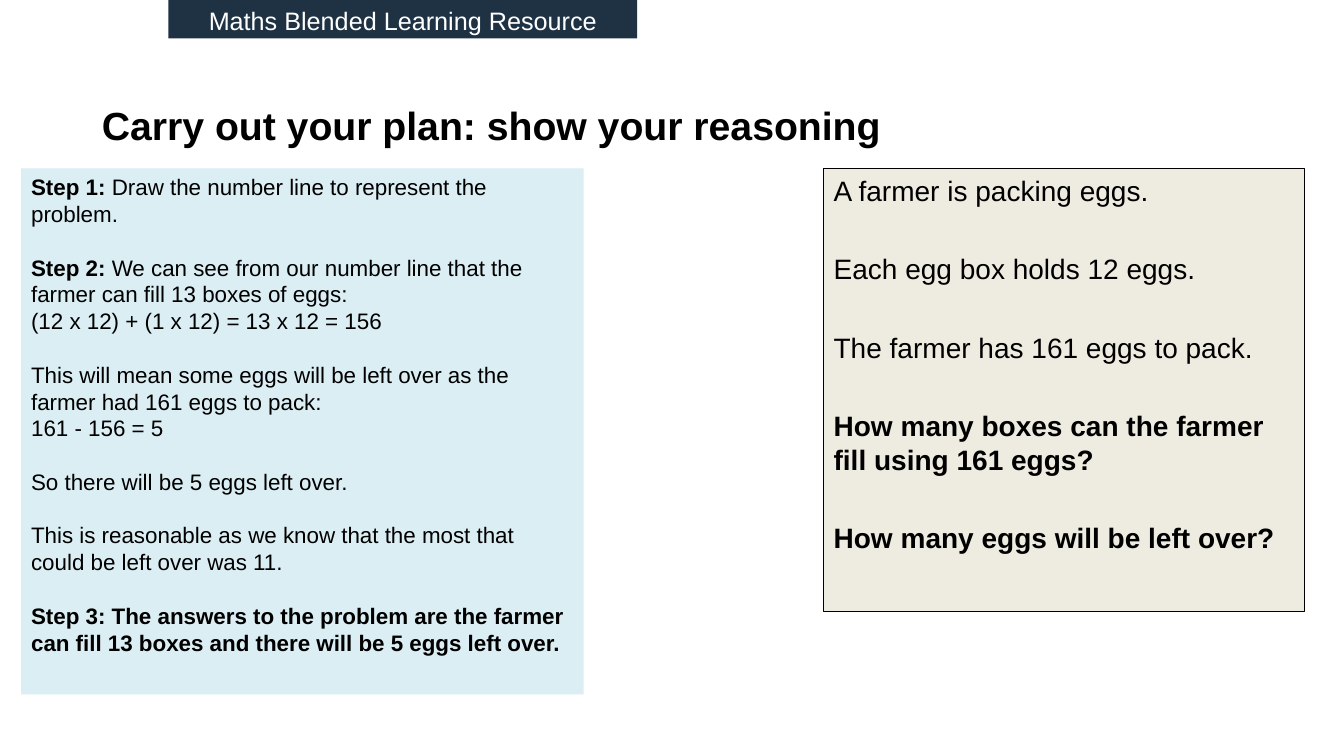
import pptx
import pptx.dml.color
import pptx.enum.shapes
import pptx.enum.text
import pptx.util

EMU_PER_PX = 9144  # 100 px to the inch
COLOURS = {
    "ink": "000000",
    "white": "FFFFFF",
    "navy": "1F3244",
    "pale blue": "DBEEF4",
    "cream": "EEECE1",
}
ALIGN = pptx.enum.text.PP_ALIGN

# Each paragraph: space before in points, bold part, plain part
SOLUTION_STEPS = [
    (0, "Step 1: ", "Draw the number line to represent the problem."),
    (19, "Step 2: ", "We can see from our number line that the farmer can fill 13 boxes of eggs:"),
    (0, "", "(12 x 12) + (1 x 12) = 13 x 12 = 156"),
    (19, "", "This will mean some eggs will be left over as the farmer had 161 eggs to pack:"),
    (0, "", "161 - 156 = 5"),
    (19, "", "So there will be 5 eggs left over."),
    (19, "", "This is reasonable as we know that the most that could be left over was 11."),
    (19, "Step 3: The answers to the problem are the farmer can fill 13 boxes "
         "and there will be 5 eggs left over.", ""),
]
EGG_PROBLEM = [
    (0, "", "A farmer is packing eggs."),
    (32, "", "Each egg box holds 12 eggs."),
    (32, "", "The farmer has 161 eggs to pack."),
    (32, "How many boxes can the farmer fill using 161 eggs?", ""),
    (32, "How many eggs will be left over?", ""),
]


def px(length):
    return pptx.util.Emu(length * EMU_PER_PX)


def rgb(name):
    return pptx.dml.color.RGBColor.from_string(COLOURS[name])


class LessonPage:
    """Holds the font and the current slide, and adds styled elements to it."""

    def __init__(self, deck, font="Arial"):
        self.font = font
        self.page = deck.slides.add_slide(deck.slide_layouts.get_by_name("Title Only"))

    def style(self, span, size, colour="ink", bold=False):
        span.font.name = self.font
        span.font.size = pptx.util.Pt(size)
        span.font.bold = bold
        span.font.color.rgb = rgb(colour)

    def title(self, text, left, top, width, height, size):
        box = self.page.shapes.title
        box.left, box.top, box.width, box.height = map(px, (left, top, width, height))
        frame = box.text_frame
        frame.text = text
        frame.vertical_anchor = pptx.enum.text.MSO_ANCHOR.MIDDLE
        frame.auto_size = pptx.enum.text.MSO_AUTO_SIZE.NONE
        para = frame.paragraphs[0]
        para.alignment = ALIGN.LEFT
        self.style(para.runs[0], size, bold=True)

    def panel(self, paragraphs, left, top, width, height, fill, size,
              colour="ink", outline=None, align=ALIGN.LEFT):
        box = self.page.shapes.add_shape(
            pptx.enum.shapes.MSO_SHAPE.RECTANGLE, *map(px, (left, top, width, height)))
        box.shadow.inherit = False
        box.fill.solid()
        box.fill.fore_color.rgb = rgb(fill)
        if outline:
            box.line.color.rgb = rgb(outline)
            box.line.width = pptx.util.Pt(0.75)
        else:
            box.line.fill.background()
        frame = box.text_frame
        frame.word_wrap = True
        frame.vertical_anchor = pptx.enum.text.MSO_ANCHOR.TOP
        for index, (gap, bold_part, plain_part) in enumerate(paragraphs):
            para = frame.add_paragraph() if index else frame.paragraphs[0]
            para.alignment = align
            para.space_before = pptx.util.Pt(gap)
            for text, bold in ((bold_part, True), (plain_part, False)):
                if text:
                    span = para.add_run()
                    span.text = text
                    self.style(span, size, colour, bold)


def main():
    deck = pptx.Presentation()
    deck.slide_width, deck.slide_height = px(1333), px(750)
    lesson = LessonPage(deck)
    lesson.title("Carry out your plan: show your reasoning", 91, 92, 900, 64, size=28)
    lesson.panel(SOLUTION_STEPS, 21, 167, 558, 522, "pale blue", size=16)
    lesson.panel([(0, "", "Maths Blended Learning Resource")], 167, 0, 465, 38,
                 "navy", size=18, colour="white", align=ALIGN.CENTER)
    lesson.panel(EGG_PROBLEM, 817, 167, 477, 440, "cream", size=20, outline="ink")
    deck.save("out.pptx")


if __name__ == "__main__":
    main()
